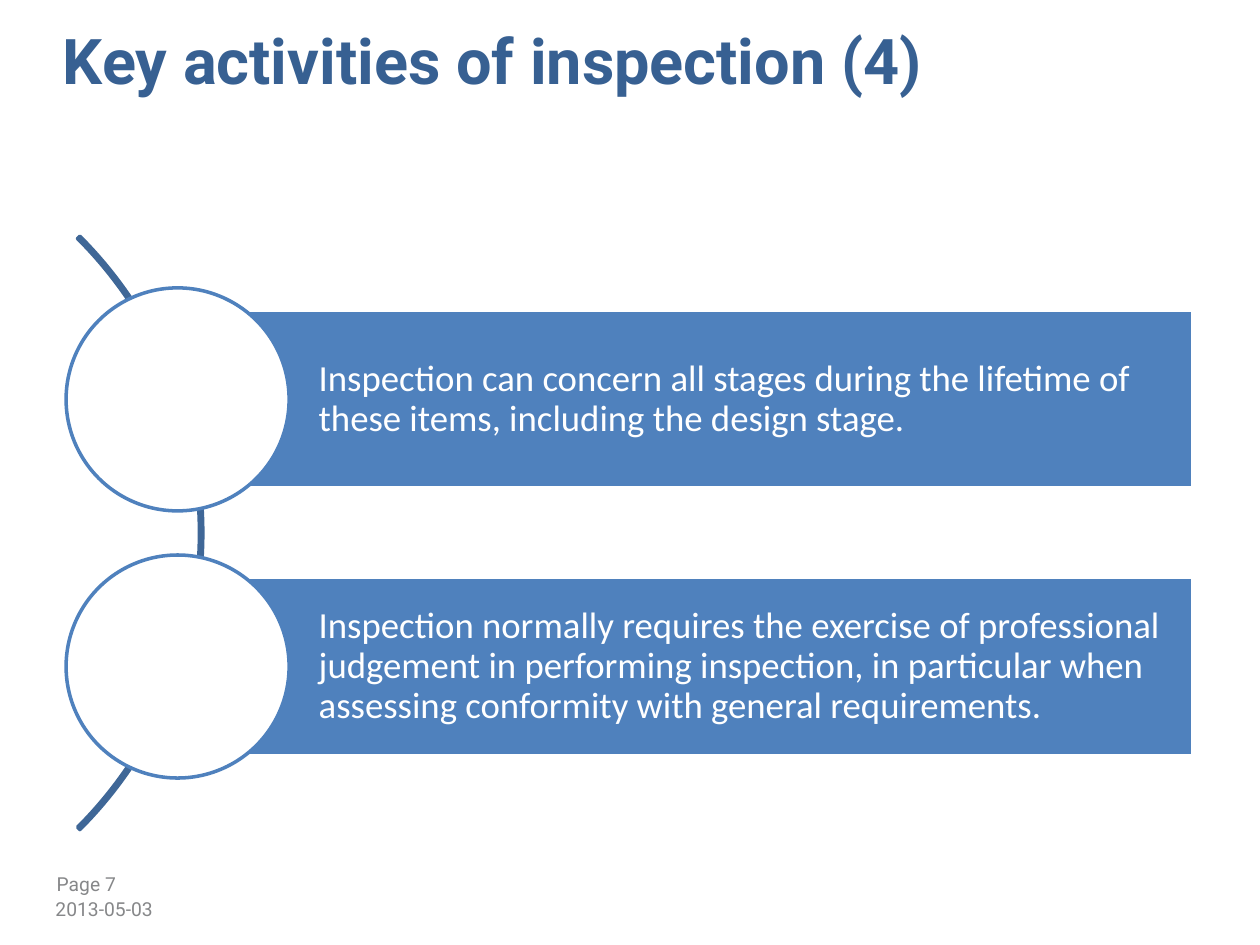
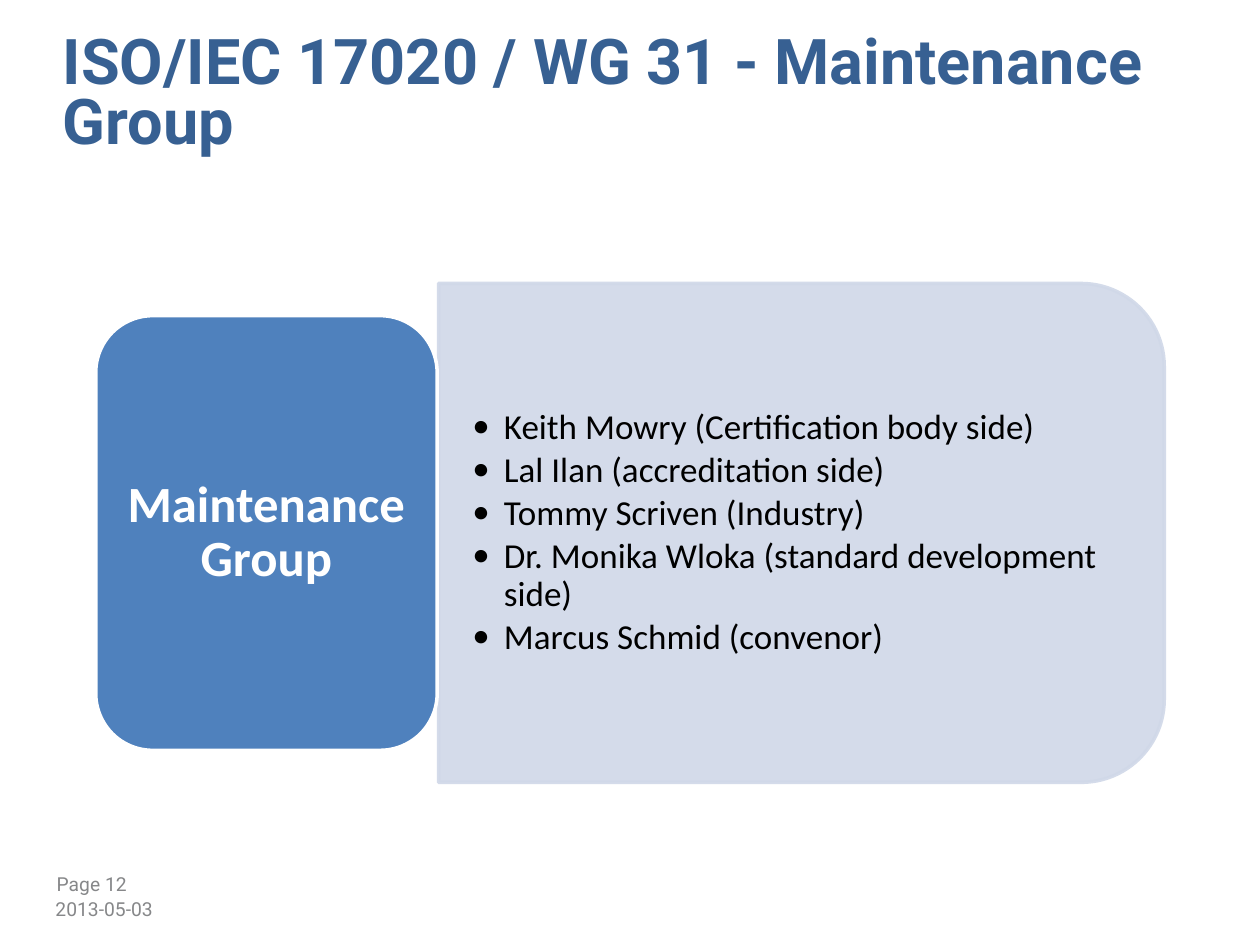
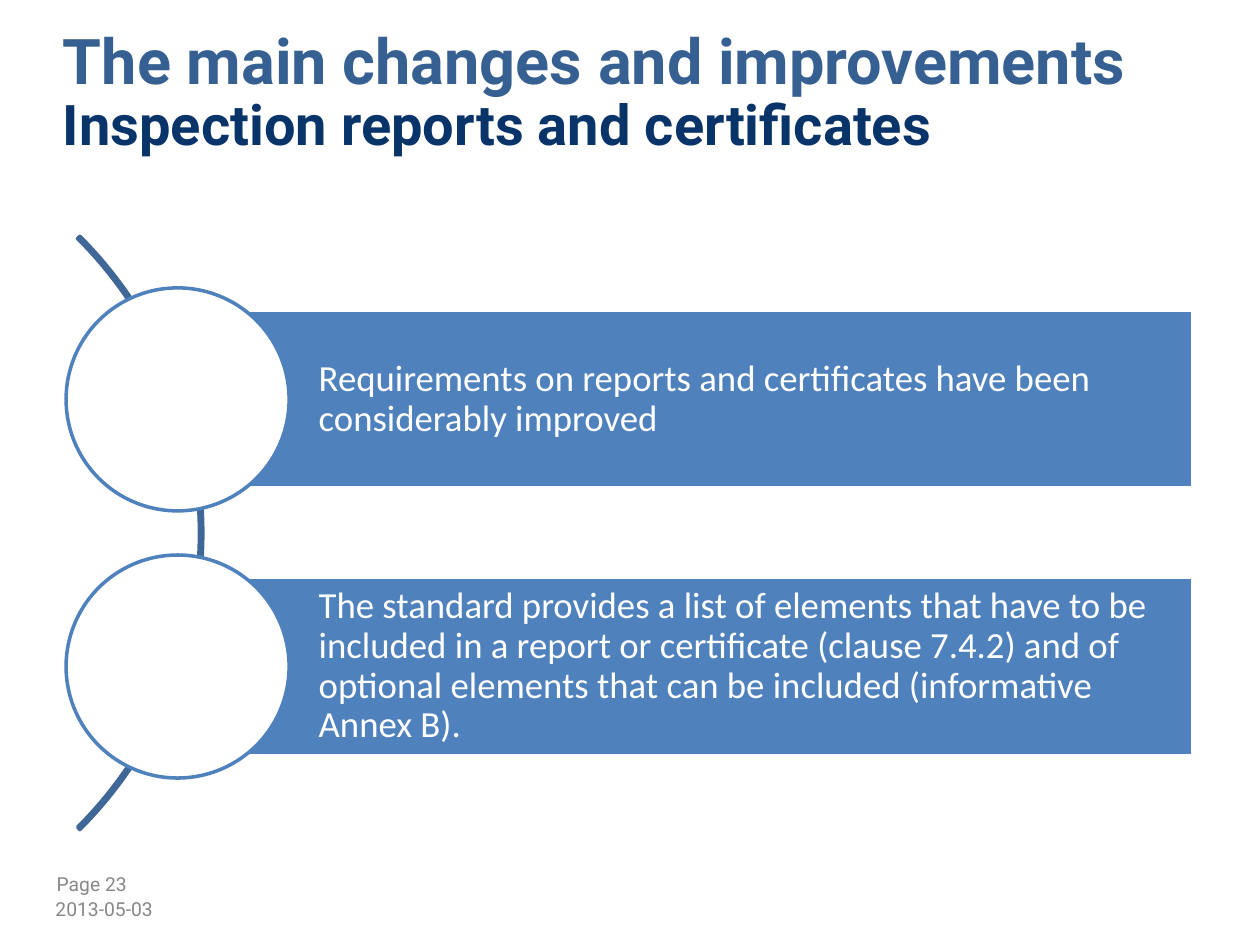
import pptx
import pptx.util
import pptx.dml.color
import pptx.enum.shapes
import pptx.enum.text
import pptx.oxml.ns
from lxml import etree

Inches, Pt = pptx.util.Inches, pptx.util.Pt
SHAPE = pptx.enum.shapes.MSO_SHAPE
ANCHOR = pptx.enum.text.MSO_ANCHOR
ALIGN = pptx.enum.text.PP_ALIGN
qn = pptx.oxml.ns.qn

BLUE, PALE, ARC, WHITE, BLACK = "4F81BD", "D0D8E8", "3F6797", "FFFFFF", "000000"
TITLE, SUBTITLE, GREY = "376092", "09346A", "868789"
HEAD, BODY = "Roboto", "Calibri"
DATE = "2013-05-03"

SLIDES = [
    {"page": "Page 7",
     "title": [("Key activities of inspection (4)", 36, TITLE)],
     "bands": ["Inspection can concern all stages during the lifetime of these items, "
               "including the design stage.",
               "Inspection normally requires the exercise of professional judgement in "
               "performing inspection, in particular when assessing conformity with "
               "general requirements."]},
    {"page": "Page 12",
     "title": [("ISO/IEC 17020 / WG 31 - Maintenance Group", 36, TITLE)],
     "group": "Maintenance Group",
     "members": ["Keith Mowry (Certification body side)",
                 "Lal Ilan (accreditation side)",
                 "Tommy Scriven (Industry)",
                 "Dr. Monika Wloka (standard development side)",
                 "Marcus Schmid (convenor)"]},
    {"page": "Page 23",
     "title": [("The main changes and improvements ", 36, TITLE),
               ("Inspection reports and certificates", 32, SUBTITLE)],
     "bands": ["Requirements on reports and certificates have been considerably improved",
               "The standard provides a list of elements that have to be included in a "
               "report or certificate (clause 7.4.2) and of optional elements that can be "
               "included (informative Annex B)."]},
]

CENTER_Y = 4.23
BAND_LEFT, BAND_W, BAND_H, BAND_STEP = 1.41, 8.06, 1.41, 2.12
CIRCLE_D, ARC_D, ARC_LEFT = 1.77, 6.66, -5.05
PANEL_LEFT, PANEL_W, PANEL_H = 3.48, 5.76, 3.96
CARD_LEFT, CARD_W, CARD_H = 0.76, 2.71, 3.45
MEMBERS_W, MEMBERS_H = 5.57, 3.57


def rgb(hex_color):
    return pptx.dml.color.RGBColor.from_string(hex_color)


def add_box(s, kind, left, top, width, height, fill, line):
    sp = s.shapes.add_shape(kind, Inches(left), Inches(top), Inches(width), Inches(height))
    sp.shadow.inherit = False
    if fill:
        sp.fill.solid()
        sp.fill.fore_color.rgb = rgb(fill)
    else:
        sp.fill.background()
    sp.line.color.rgb = rgb(line)
    sp.line.width = Pt(2)
    return sp


def set_frame(sp, insets=(0, 0, 0, 0), anchor=ANCHOR.TOP):
    tf = sp.text_frame
    tf.word_wrap = True
    tf.vertical_anchor = anchor
    tf.margin_left, tf.margin_top, tf.margin_right, tf.margin_bottom = map(Inches, insets)
    return tf


def add_text_box(s, left, top, width, height):
    return s.shapes.add_textbox(Inches(left), Inches(top), Inches(width), Inches(height))


def style_run(r, size, color, font, bold=False):
    r.font.size, r.font.name, r.font.bold = Pt(size), font, bold
    r.font.color.rgb = rgb(color)


def write(p, text, size, color, font, bold=False, align=ALIGN.LEFT, spacing=None):
    p.text = text
    p.alignment = align
    p.line_spacing = spacing
    style_run(p.runs[0], size, color, font, bold)


def add_bullet(p, indent):
    pPr = p._p.get_or_add_pPr()
    pPr.set("marL", str(Inches(indent)))
    pPr.set("indent", str(-Inches(indent)))
    etree.SubElement(pPr, qn("a:buFont"), typeface=BODY)
    etree.SubElement(pPr, qn("a:buChar"), char="•")


def add_frame_parts(s, title, page):
    p = set_frame(add_text_box(s, 0.5, 0.3, 9, 1.25)).paragraphs[0]
    p.line_spacing = Pt(34)
    for text, size, color in title:
        r = p.add_run()
        r.text = text
        style_run(r, size, color, HEAD, True)
    for text, left, top, width, height in ((page, 0.45, 6.92, 2.33, 0.2),
                                           (DATE, 0.44, 7.12, 6.15, 0.36)):
        tf = set_frame(add_text_box(s, left, top, width, height))
        write(tf.paragraphs[0], text, 11, GREY, HEAD)


def add_bands(s, bands):
    arc = add_box(s, SHAPE.BLOCK_ARC, ARC_LEFT, CENTER_Y - ARC_D / 2, ARC_D, ARC_D, None, ARC)
    for i, value in enumerate((189, 27, 0.004)):
        arc.adjustments[i] = value
    for i, text in enumerate(bands):
        mid = CENTER_Y + (i - (len(bands) - 1) / 2) * BAND_STEP
        band = add_box(s, SHAPE.RECTANGLE, BAND_LEFT, mid - BAND_H / 2, BAND_W, BAND_H,
                       BLUE, WHITE)
        tf = set_frame(band, (1.12, 0.06, 0.06, 0.06), ANCHOR.MIDDLE)
        write(tf.paragraphs[0], text, 21, WHITE, BODY, spacing=0.9)
        add_box(s, SHAPE.OVAL, BAND_LEFT - CIRCLE_D / 2, mid - CIRCLE_D / 2,
                CIRCLE_D, CIRCLE_D, WHITE, BLUE)


def add_group(s, group, members):
    panel = add_box(s, SHAPE.ROUND_2_SAME_RECTANGLE, PANEL_LEFT + (PANEL_W - PANEL_H) / 2,
                    CENTER_Y - PANEL_W / 2, PANEL_H, PANEL_W, PALE, PALE)
    panel.rotation = 90
    for clr in panel._element.spPr.iter(qn("a:srgbClr")):
        etree.SubElement(clr, qn("a:alpha"), val="90000")
    tf = set_frame(add_text_box(s, PANEL_LEFT, CENTER_Y - MEMBERS_H / 2, MEMBERS_W, MEMBERS_H),
                   (0.27, 0.14, 0.27, 0.14), ANCHOR.MIDDLE)
    for i, member in enumerate(members):
        p = tf.add_paragraph() if i else tf.paragraphs[0]
        add_bullet(p, 0.25)
        write(p, member, 20, BLACK, BODY, spacing=0.9)
        p.space_after = Pt(3)
    card = add_box(s, SHAPE.ROUNDED_RECTANGLE, CARD_LEFT, CENTER_Y - CARD_H / 2,
                   CARD_W, CARD_H, BLUE, WHITE)
    tf = set_frame(card, (0.02, 0.06, 0.02, 0.06), ANCHOR.MIDDLE)
    write(tf.paragraphs[0], group, 29, WHITE, BODY, True, ALIGN.CENTER, 0.9)


def main():
    prs = pptx.Presentation()
    prs.slide_width, prs.slide_height = Inches(10), Inches(7.5)
    for content in SLIDES:
        s = prs.slides.add_slide(prs.slide_layouts[6])
        add_frame_parts(s, content["title"], content["page"])
        if "bands" in content:
            add_bands(s, content["bands"])
        else:
            add_group(s, content["group"], content["members"])
    prs.save("out.pptx")


if __name__ == "__main__":
    main()
